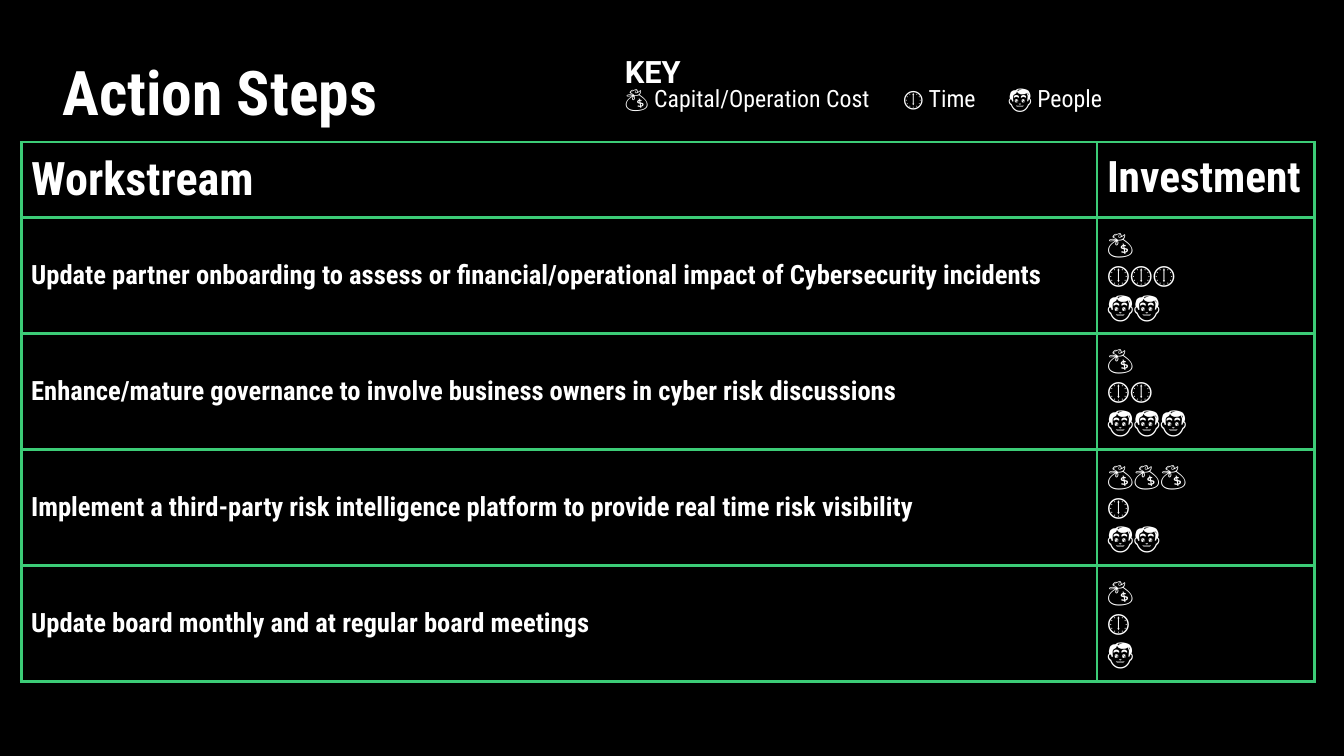
from dataclasses import dataclass

from lxml import etree
from pptx import Presentation
from pptx.dml.color import RGBColor
from pptx.enum.text import MSO_ANCHOR
from pptx.oxml.ns import qn
from pptx.util import Inches, Pt

MIDDLE, TOP = MSO_ANCHOR.MIDDLE, MSO_ANCHOR.TOP
BLACK, WHITE, GREEN = "000000", "FFFFFF", "3CCC77"
CONDENSED = "Roboto Condensed"
COST, TIME, PEOPLE = "💰", "🕕", "👨"
BORDER_PT = 2.25
COL_WIDTHS = (10.67, 2.16)
HEADER_HEIGHT, ROW_HEIGHT = 0.73, 1.13


@dataclass
class Workstream:
    action: str
    cost: int
    time: int
    people: int

    def investment(self) -> list[str]:
        return [COST * self.cost, TIME * self.time, PEOPLE * self.people]


WORKSTREAMS = [
    Workstream("Update partner onboarding to assess or financial/operational impact "
               "of Cybersecurity incidents", 1, 3, 2),
    Workstream("Enhance/mature governance to involve business owners in cyber risk "
               "discussions", 1, 2, 3),
    Workstream("Implement a third-party risk intelligence platform to provide real "
               "time risk visibility", 3, 1, 2),
    Workstream("Update board monthly and at regular board meetings", 1, 1, 1),
]


def rgb(value: str) -> RGBColor:
    return RGBColor.from_string(value)


def style(p, size: float, bold: bool = True, font: str = CONDENSED,
          spacing: float | None = None) -> None:
    p.line_spacing = spacing
    p.font.size, p.font.bold, p.font.name = Pt(size), bold, font
    p.font.color.rgb = rgb(WHITE)


def add_text_box(s, left: float, top: float, width: float, height: float,
                 anchor, inset: float):
    tf = s.shapes.add_textbox(*map(Inches, (left, top, width, height))).text_frame
    tf.word_wrap = True
    tf.vertical_anchor = anchor
    tf.margin_left = tf.margin_right = Inches(0.1)
    tf.margin_top = tf.margin_bottom = Inches(inset)
    return tf


def add_tabs(p, positions: tuple[float, ...]) -> None:
    tabs = etree.SubElement(p._p.get_or_add_pPr(), qn("a:tabLst"))
    for position in positions:
        etree.SubElement(tabs, qn("a:tab"), pos=str(Inches(position)), algn="l")


def add_borders(cell) -> None:
    tc_pr = cell._tc.get_or_add_tcPr()
    for i, side in enumerate(("a:lnL", "a:lnR", "a:lnT", "a:lnB")):
        ln = etree.Element(qn(side), w=str(Pt(BORDER_PT)))
        fill = etree.SubElement(ln, qn("a:solidFill"))
        etree.SubElement(fill, qn("a:srgbClr"), val=GREEN)
        tc_pr.insert(i, ln)


def fill_cell(cell, lines: list[str], size: float, bold: bool = True,
              spacing: float | None = None) -> None:
    cell.fill.background()
    cell.vertical_anchor = MIDDLE
    cell.margin_left = cell.margin_right = Inches(0.1)
    cell.margin_top = cell.margin_bottom = Inches(0.1)
    add_borders(cell)
    cell.text_frame.text = "\n".join(lines)
    for p in cell.text_frame.paragraphs:
        style(p, size, bold, spacing=spacing)


def add_title(s) -> None:
    p = add_text_box(s, 0.52, 0.38, 11.5, 1.13, MIDDLE, 0.05).paragraphs[0]
    p.text = "Action Steps"
    style(p, 44, spacing=0.9)


def add_workstream_table(s) -> None:
    heights = [HEADER_HEIGHT] + [ROW_HEIGHT] * len(WORKSTREAMS)
    table = s.shapes.add_table(
        len(heights), len(COL_WIDTHS), Inches(0.21), Inches(1.41),
        Inches(sum(COL_WIDTHS)), Inches(sum(heights))).table
    table.horz_banding = False
    for column, width in zip(table.columns, COL_WIDTHS):
        column.width = Inches(width)
    for row, height in zip(table.rows, heights):
        row.height = Inches(height)
    fill_cell(table.cell(0, 0), ["Workstream"], 33)
    fill_cell(table.cell(0, 1), ["Investment"], 31, spacing=0.8)
    for i, workstream in enumerate(WORKSTREAMS, 1):
        fill_cell(table.cell(i, 0), [workstream.action], 19)
        fill_cell(table.cell(i, 1), workstream.investment(), 19, bold=False)


def add_key(s) -> None:
    tf = add_text_box(s, 6.1, 0.42, 7.1, 0.92, TOP, 0.1)
    heading, legend = tf.paragraphs[0], tf.add_paragraph()
    heading.text = "KEY"
    style(heading, 22, font="Roboto")
    legend.text = f"{COST} Capital/Operation Cost\t{TIME} Time\t{PEOPLE} People"
    add_tabs(legend, (2.76, 3.8))
    style(legend, 17, bold=False, spacing=0.8)


def main() -> None:
    prs = Presentation()
    prs.slide_width, prs.slide_height = Inches(13.33), Inches(7.5)
    s = prs.slides.add_slide(prs.slide_layouts[6])
    s.background.fill.solid()
    s.background.fill.fore_color.rgb = rgb(BLACK)
    add_title(s)
    add_workstream_table(s)
    add_key(s)
    prs.save("out.pptx")


if __name__ == "__main__":
    main()
